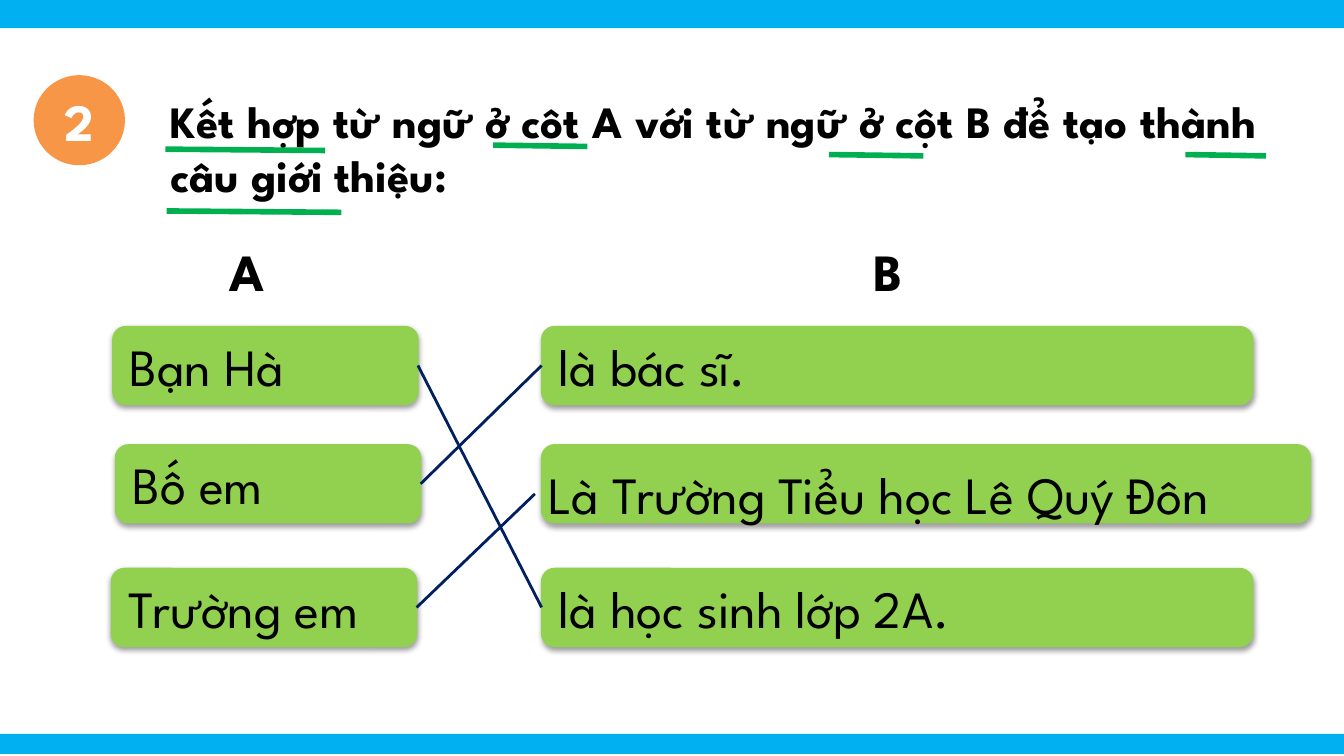
from dataclasses import dataclass

from lxml.etree import SubElement
from pptx import Presentation
from pptx.dml.color import RGBColor
from pptx.enum.shapes import MSO_CONNECTOR as Connector, MSO_SHAPE as Preset
from pptx.enum.text import MSO_ANCHOR as Anchor, MSO_AUTO_SIZE as AutoSize, PP_ALIGN as Align
from pptx.oxml.ns import qn
from pptx.util import Inches, Pt


@dataclass(frozen=True)
class Theme:
    """Colours, font and type sizes of the slide."""
    font: str = "League Spartan"
    title_size: int = 24
    body_size: int = 28
    text: str = "000000"
    light: str = "FFFFFF"
    badge: str = "F79646"
    card: str = "92D050"
    band: str = "00B0F0"
    match: str = "002060"
    underline: str = "00B050"


THEME = Theme()
TOP, LEFT, BOTTOM, RIGHT = range(4)
CARD_HEIGHT = 0.58
ROW_TOPS = (2.43, 3.31, 4.23)


def write(shape, text, size=THEME.body_size, color=THEME.text, bold=False,
          align=Align.LEFT, anchor=Anchor.MIDDLE, wrap=True):
    """Put one formatted paragraph into a shape."""
    frame = shape.text_frame
    frame.text = text
    frame.word_wrap = wrap
    frame.vertical_anchor = anchor
    paragraph = frame.paragraphs[0]
    paragraph.alignment = align
    font = paragraph.runs[0].font
    font.name, font.size, font.bold = THEME.font, Pt(size), bold
    font.color.rgb = RGBColor.from_string(color)


def add_filled(shapes, preset, box, color):
    """Add a plain filled shape without outline or shadow."""
    shape = shapes.add_shape(preset, *map(Inches, box))
    shape.fill.solid()
    shape.fill.fore_color.rgb = RGBColor.from_string(color)
    shape.line.fill.background()
    shape.shadow.inherit = False
    return shape


def add_label(shapes, box, text, bold=False):
    """Add an unwrapped text box."""
    label = shapes.add_textbox(*map(Inches, box))
    write(label, text, bold=bold, anchor=Anchor.TOP, wrap=False)
    label.text_frame.auto_size = AutoSize.SHAPE_TO_FIT_TEXT
    return label


def add_card(shapes, box, text=None):
    """Add a rounded card with a soft shadow below it."""
    card = add_filled(shapes, Preset.ROUNDED_RECTANGLE, box, THEME.card)
    card.line.color.rgb = RGBColor.from_string(THEME.card)
    card.line.width = Pt(0.75)
    effects = card._element.spPr.find(qn("a:effectLst"))
    shadow = SubElement(effects, qn("a:outerShdw"), blurRad=str(Pt(3.1)),
                        dist=str(Pt(1.6)), dir="5400000", rotWithShape="0")
    color = SubElement(shadow, qn("a:srgbClr"), val="000000")
    SubElement(color, qn("a:alpha"), val="38000")
    if text:
        write(card, text)
    return card


def add_line(shapes, color, width, start=(0, 0), end=(0, 0)):
    """Add a straight line without shadow."""
    line = shapes.add_connector(Connector.STRAIGHT, *map(Inches, (*start, *end)))
    line.line.color.rgb = RGBColor.from_string(color)
    line.line.width = Pt(width)
    SubElement(line._element.spPr, qn("a:effectLst"))
    return line


def add_heading(slide, left, top):
    """Place the numbered badge and the task title."""
    badge = add_filled(slide.shapes, Preset.OVAL, (left, top, 0.68, 0.67), THEME.badge)
    write(badge, "2", color=THEME.light, bold=True, align=Align.CENTER)
    title = slide.shapes.title
    title.left, title.top = Inches(left + 0.92), Inches(top + 0.09)
    title.width, title.height = Inches(8.28), Inches(0.91)
    write(title, "Kết hợp từ ngữ ở cột A với từ ngữ ở cột B để tạo thành câu giới thiệu:",
          THEME.title_size, bold=True, align=Align.JUSTIFY, anchor=Anchor.TOP)
    title.text_frame.auto_size = AutoSize.NONE


def add_column_a(shapes, left):
    """Place the subjects and return their cards."""
    add_label(shapes, (left + 0.78, 1.73, 0.44, 0.57), "A", bold=True)
    rows = zip(ROW_TOPS, (0.01, 0.03, 0), ("Bạn Hà", "Bố em", "Trường em"))
    return [add_card(shapes, (left + shift, top, 2.27, CARD_HEIGHT), text)
            for top, shift, text in rows]


def add_column_b(shapes, left):
    """Place the predicates and return the shapes that the lines reach."""
    add_label(shapes, (left + 2.37, 1.73, 0.41, 0.57), "B", bold=True)
    doctor, pupil = [add_card(shapes, (left, top, 5.29, CARD_HEIGHT), text)
                     for top, text in ((ROW_TOPS[0], "là bác sĩ."),
                                       (ROW_TOPS[2], "là học sinh lớp 2A."))]
    group = shapes.add_group_shape()
    add_card(group.shapes, (left, ROW_TOPS[1], 5.72, CARD_HEIGHT))
    school = add_label(group.shapes, (left - 0.05, ROW_TOPS[1] + 0.08, 5.61, 0.57),
                       "Là Trường Tiểu học Lê Quý Đôn")
    return doctor, school, pupil


def add_matches(shapes, subjects, predicates):
    """Join each subject to its predicate."""
    for subject, match in zip(subjects, (2, 0, 1)):
        line = add_line(shapes, THEME.match, 1.5)
        line.begin_connect(subject, RIGHT)
        line.end_connect(predicates[match], LEFT)


def add_underlines(shapes):
    """Underline the key words of the title."""
    for left, top, width in ((1.23, 1.11, 1.19), (3.67, 1.08, 0.7), (8.82, 1.15, 0.6),
                             (6.17, 1.15, 0.7), (1.24, 1.57, 1.3)):
        add_line(shapes, THEME.underline, 3, (left, top), (left + width, top + 0.01))


def add_bands(shapes, width):
    """Place the bands along the bottom and top edges."""
    for top, height in ((5.46, 0.15), (-0.02, 0.23)):
        add_filled(shapes, Preset.RECTANGLE, (0, top, width, height), THEME.band)


def main():
    """Build and save the matching exercise."""
    presentation = Presentation()
    presentation.slide_width = Inches(10)
    presentation.slide_height = presentation.slide_width * 9 // 16
    slide = presentation.slides.add_slide(presentation.slide_layouts[5])
    add_heading(slide, 0.25, 0.56)
    subjects = add_column_a(slide.shapes, 0.83)
    predicates = add_column_b(slide.shapes, 4.03)
    add_matches(slide.shapes, subjects, predicates)
    add_bands(slide.shapes, 10)
    add_underlines(slide.shapes)
    presentation.save("out.pptx")


if __name__ == "__main__":
    main()
